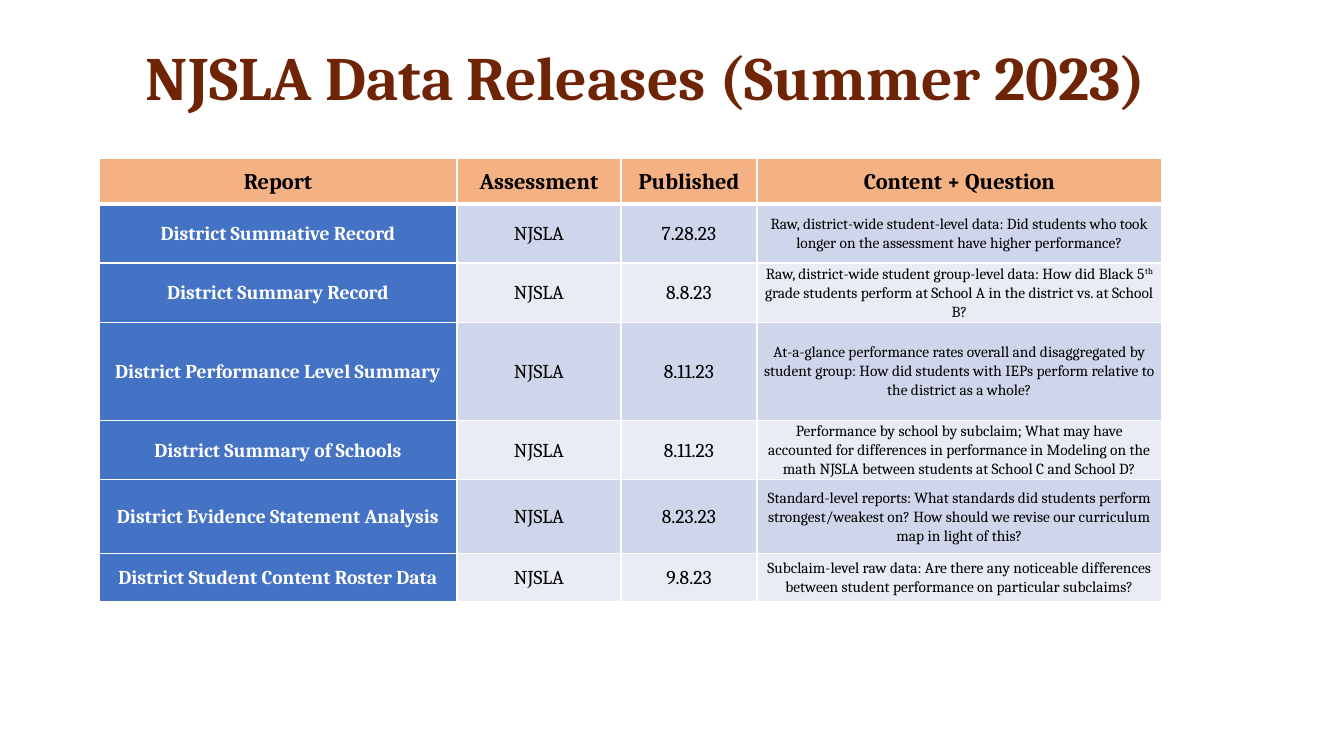
from typing import NamedTuple

from pptx import Presentation
from pptx.dml.color import RGBColor
from pptx.enum.text import MSO_ANCHOR, PP_ALIGN
from pptx.oxml import parse_xml
from pptx.oxml.ns import nsdecls
from pptx.util import Emu, Pt

FONT = "Cambria"
BLACK = "000000"
WHITE = "FFFFFF"
BANDS = ("CFD5EA", "E9EBF5")


class TextStyle(NamedTuple):
    size: int
    color: str
    bold: bool = False


class Release(NamedTuple):
    report: str
    published: str
    question: str
    height: int


TITLE = TextStyle(44, "6E2405", True)
HEADER = TextStyle(16, BLACK, True)
REPORT = TextStyle(14, WHITE, True)
DETAIL = TextStyle(14, BLACK)
QUESTION = TextStyle(11, BLACK)

HEADINGS = ("Report", "Assessment", "Published", "Content + Question")
COLUMN_WIDTHS = (358, 164, 136, 405)
HEADER_HEIGHT = 46
SUPERSCRIPT_MARK = "^"

RELEASES = (
    Release("District Summative Record", "7.28.23",
            "Raw, district-wide student-level data: Did students who took longer "
            "on the assessment have higher performance?", 59),
    Release("District Summary Record", "8.8.23",
            "Raw, district-wide student group-level data: How did Black 5^th^ grade "
            "students perform at School A in the district vs. at School B?", 46),
    Release("District Performance Level Summary", "8.11.23",
            "At-a-glance performance rates overall and disaggregated by student group: "
            "How did students with IEPs perform relative to the district as a whole?", 98),
    Release("District Summary of Schools", "8.11.23",
            "Performance by school by subclaim; What may have accounted for differences "
            "in performance in Modeling on the math NJSLA between students at School C "
            "and School D?", 46),
    Release("District Evidence Statement Analysis", "8.23.23",
            "Standard-level reports: What standards did students perform "
            "strongest/weakest on? How should we revise our curriculum map in light "
            "of this?", 74),
    Release("District Student Content Roster Data", "9.8.23",
            "Subclaim-level raw data: Are there any noticeable differences between "
            "student performance on particular subclaims?", 48),
)


def px(length: int) -> Emu:
    return Emu(round(length * 914400 / 100.8))


def rgb(color: str) -> RGBColor:
    return RGBColor.from_string(color)


def write_text(paragraph, text: str, style: TextStyle) -> None:
    first, *others = text.split(SUPERSCRIPT_MARK)
    paragraph.text = first
    for part in others:
        paragraph.add_run().text = part
    for index, run in enumerate(paragraph.runs):
        run.font.name = FONT
        run.font.size = Pt(style.size)
        run.font.bold = style.bold
        run.font.color.rgb = rgb(style.color)
        if index % 2:
            run._r.get_or_add_rPr().set("baseline", "30000")


def add_borders(cell, top: int, bottom: int) -> None:
    properties = cell._tc.get_or_add_tcPr()
    for side, width in (("L", 1), ("R", 1), ("T", top), ("B", bottom)):
        properties.append(parse_xml(
            f'<a:ln{side} {nsdecls("a")} w="{Pt(width)}"><a:solidFill>'
            f'<a:srgbClr val="{WHITE}"/></a:solidFill></a:ln{side}>'))


def fill_cell(cell, text: str, style: TextStyle, fill: str, row: int) -> None:
    add_borders(cell, 3 if row == 1 else 1, 3 if row == 0 else 1)
    cell.fill.solid()
    cell.fill.fore_color.rgb = rgb(fill)
    cell.vertical_anchor = MSO_ANCHOR.MIDDLE
    cell.margin_left = cell.margin_right = px(7)
    cell.margin_top = cell.margin_bottom = 0
    paragraph = cell.text_frame.paragraphs[0]
    write_text(paragraph, text, style)
    paragraph.alignment = PP_ALIGN.CENTER
    paragraph.line_spacing = 1.07


def add_title(slide) -> None:
    shape = slide.shapes.add_textbox(px(136), px(39), px(1113), px(83))
    shape.text_frame.word_wrap = True
    shape.text_frame.vertical_anchor = MSO_ANCHOR.MIDDLE
    paragraph = shape.text_frame.paragraphs[0]
    write_text(paragraph, "NJSLA Data Releases (Summer 2023)", TITLE)
    paragraph.line_spacing = 0.9


def add_release_table(slide) -> None:
    heights = (HEADER_HEIGHT, *(release.height for release in RELEASES))
    table = slide.shapes.add_table(
        len(heights), len(COLUMN_WIDTHS), px(99), px(158),
        px(sum(COLUMN_WIDTHS)), px(sum(heights))).table
    table.first_row = table.horz_banding = False
    for column, width in zip(table.columns, COLUMN_WIDTHS):
        column.width = px(width)
    for table_row, height in zip(table.rows, heights):
        table_row.height = px(height)
    for column, heading in enumerate(HEADINGS):
        fill_cell(table.cell(0, column), heading, HEADER, "F4B183", 0)
    for row, release in enumerate(RELEASES, start=1):
        band = BANDS[(row - 1) % 2]
        entries = (
            (release.report, REPORT, "4472C4"),
            ("NJSLA", DETAIL, band),
            (release.published, DETAIL, band),
            (release.question, QUESTION, band),
        )
        for column, (text, style, fill) in enumerate(entries):
            fill_cell(table.cell(row, column), text, style, fill, row)


def main() -> None:
    presentation = Presentation()
    presentation.slide_width = px(1344)
    presentation.slide_height = px(756)
    slide = presentation.slides.add_slide(presentation.slide_layouts[6])
    add_title(slide)
    add_release_table(slide)
    presentation.save("out.pptx")


if __name__ == "__main__":
    main()
